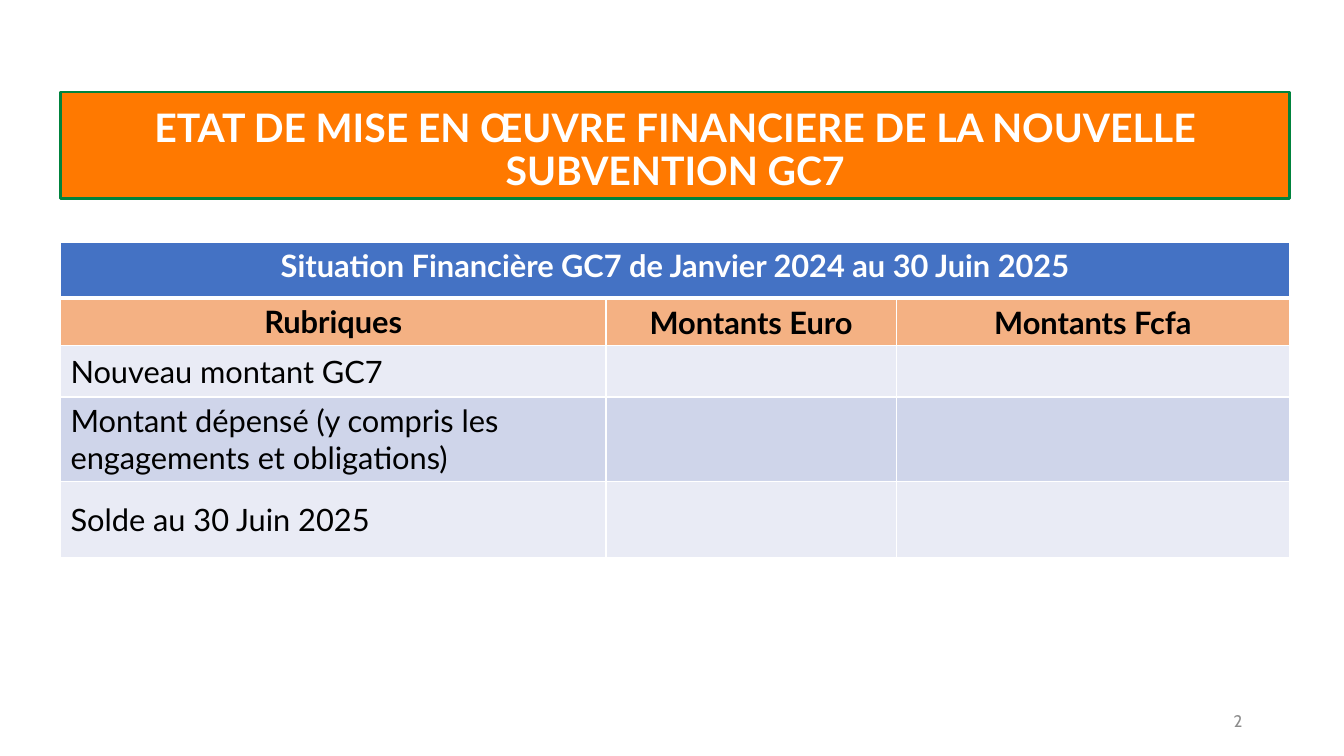
"""Build the GC7 financial status slide."""
from dataclasses import dataclass

from lxml import etree
from pptx import Presentation
from pptx import util as u
from pptx.dml.color import RGBColor
from pptx.enum import shapes, text
from pptx.oxml import ns

PX = 9144
WHITE = RGBColor(0xFF, 0xFF, 0xFF)
BLACK = RGBColor(0, 0, 0)
ORANGE = RGBColor(0xFF, 0x79, 0x00)
GREEN = RGBColor(0x00, 0x83, 0x3D)
BLUE = RGBColor(0x44, 0x72, 0xC4)
PEACH = RGBColor(0xF4, 0xB1, 0x83)
PALE = RGBColor(0xE9, 0xEB, 0xF5)
MIST = RGBColor(0xCF, 0xD5, 0xEA)
GREY = RGBColor(0x8C, 0x8C, 0x8C)
LEFT, MID, RIGHT = text.PP_ALIGN.LEFT, text.PP_ALIGN.CENTER, text.PP_ALIGN.RIGHT
TOP, CENTRE, BASE = (text.MSO_ANCHOR.TOP, text.MSO_ANCHOR.MIDDLE,
                     text.MSO_ANCHOR.BOTTOM)
COLS = (541, 288, 390)


@dataclass
class Style:
    """Font and paragraph format of a text."""
    size: int
    color: RGBColor
    bold: bool = False
    align: text.PP_ALIGN = LEFT
    name: str = "Lato"
    lead: float = 1.0
    before: int = 0
    after: int = 0


@dataclass
class Row:
    """One table row: height, fill, cell texts and their format."""
    high: int
    fill: RGBColor
    words: tuple
    style: Style
    anchor: text.MSO_ANCHOR = CENTRE


HEAD = Style(22, WHITE, True, MID, before=6)
LABEL = Style(22, BLACK, True, MID)
BODY = Style(22, BLACK, before=3, after=3)
ROWS = (
    Row(56, BLUE, ("Situation Financière GC7 de Janvier 2024 au 30 Juin 2025",),
        HEAD, TOP),
    Row(47, PEACH, ("Rubriques", "Montants Euro", "Montants Fcfa"), LABEL),
    Row(51, PALE, ("Nouveau montant GC7",), BODY),
    Row(83, MIST, ("Montant dépensé (y compris les engagements et obligations)",),
        BODY),
    Row(76, PALE, ("Solde au 30 Juin 2025",), BODY),
)


def apply(item: object, values: dict) -> None:
    """Set each named value on the item."""
    for key, value in values.items():
        setattr(item, key, value)


def write(frame: object, words: str, style: Style) -> None:
    """Put one styled paragraph in a text frame."""
    frame.word_wrap = True
    para = frame.paragraphs[0]
    apply(para, {"alignment": style.align, "line_spacing": style.lead,
                 "space_before": u.Pt(style.before),
                 "space_after": u.Pt(style.after)})
    run = para.add_run()
    run.text = words
    apply(run.font, {"name": style.name, "size": u.Pt(style.size),
                     "bold": style.bold})
    run.font.color.rgb = style.color


def edge(cell: object, widths: dict) -> None:
    """Draw white cell borders of the given point widths."""
    props = cell._tc.get_or_add_tcPr()
    for side, width in widths.items():
        line = etree.SubElement(props, ns.qn(f"a:ln{side}"), w=str(u.Pt(width)))
        fill = etree.SubElement(line, ns.qn("a:solidFill"))
        etree.SubElement(fill, ns.qn("a:srgbClr"), val=str(WHITE))


def banner(slide: object) -> None:
    """Draw the title bar."""
    box = slide.shapes.add_shape(shapes.MSO_SHAPE.RECTANGLE,
                                 *(n * PX for n in (60, 91, 1219, 106)))
    box.shadow.inherit = False
    box.fill.solid()
    box.fill.fore_color.rgb = ORANGE
    box.line.color.rgb = GREEN
    box.line.width = u.Pt(1.5)
    box.text_frame.vertical_anchor = BASE
    write(box.text_frame,
          "ETAT DE MISE EN ŒUVRE FINANCIERE DE LA NOUVELLE SUBVENTION GC7",
          Style(28, WHITE, True, MID, lead=0.9))


def grid(slide: object) -> None:
    """Draw the financial table."""
    high = sum(row.high for row in ROWS)
    table = slide.shapes.add_table(
        len(ROWS), len(COLS), 60 * PX, 240 * PX, sum(COLS) * PX, high * PX).table
    for col, wide in zip(table.columns, COLS):
        col.width = wide * PX
    for i, row in enumerate(ROWS):
        table.rows[i].height = row.high * PX
        for j, cell in enumerate(table.rows[i].cells):
            edge(cell, {"L": 1, "R": 1, "T": 3 if i == 1 else 1,
                        "B": 3 if i == 0 else 1})
            cell.fill.solid()
            cell.fill.fore_color.rgb = row.fill
            cell.vertical_anchor = row.anchor
            if j < len(row.words):
                write(cell.text_frame, row.words[j], row.style)
            if i == 1 and j:
                apply(cell, {"margin_left": PX, "margin_right": PX,
                             "margin_top": PX, "margin_bottom": 0})
    table.cell(1, 0).vertical_anchor = TOP
    table.cell(0, 0).merge(table.cell(0, len(COLS) - 1))


def number(slide: object) -> None:
    """Write the page number."""
    box = slide.shapes.add_textbox(*(n * PX for n in (942, 695, 300, 40)))
    box.text_frame.vertical_anchor = CENTRE
    write(box.text_frame, "2", Style(12, GREY, align=RIGHT, name="Cabin"))


def main() -> None:
    """Build and save the slide."""
    deck = Presentation()
    apply(deck, {"slide_width": 1333 * PX, "slide_height": 750 * PX})
    slide = deck.slides.add_slide(deck.slide_layouts[6])
    for draw in (banner, grid, number):
        draw(slide)
    deck.save("out.pptx")


if __name__ == "__main__":
    main()
